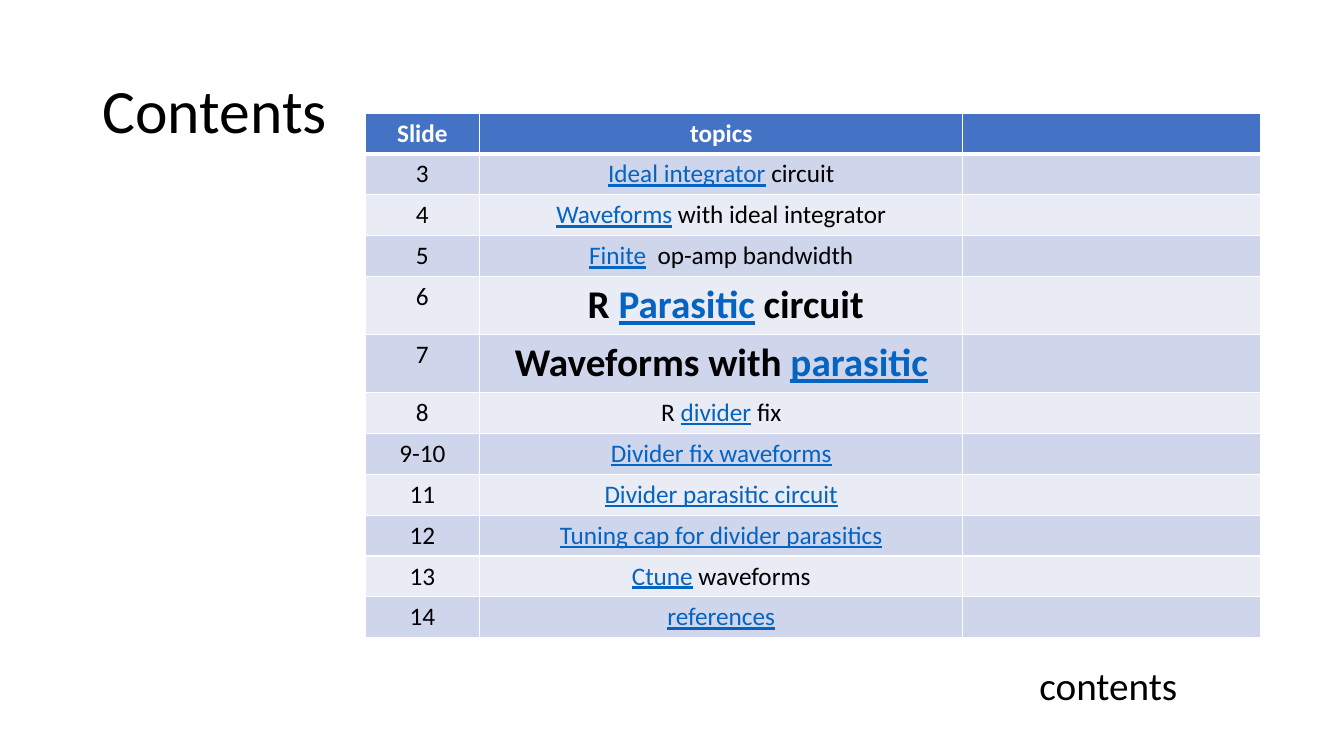
"""Builds the contents slide with its table of topics."""
from lxml.etree import SubElement as Sub
from pptx import Presentation as Deck
from pptx.dml.color import RGBColor as Rgb
from pptx.enum.text import MSO_ANCHOR as Anchor, PP_ALIGN as Align
from pptx.oxml.ns import qn
from pptx.util import Inches, Pt

WIDE, HIGH = Inches(13.33), Inches(7.5)
HUES = {"text": "000000", "link": "0563C1", "head": "4472C4",
        "odd": "CFD5EA", "even": "E9EBF5", "white": "FFFFFF"}
FONT = "Calibri"
BODY, BIG = 18, 28
COLS = (8.55, 35.93, 22.2)
ROWS = {BODY: 5.41, BIG: 7.67}
TOPICS = [
    ("3", "|Ideal integrator| circuit", BODY),
    ("4", "|Waveforms| with ideal integrator", BODY),
    ("5", "|Finite|  op-amp bandwidth", BODY),
    ("6", " R |Parasitic| circuit", BIG),
    ("7", "Waveforms with |parasitic", BIG),
    ("8", "R |divider| fix", BODY),
    ("9-10", "|Divider fix waveforms", BODY),
    ("11", "|Divider parasitic circuit", BODY),
    ("12", "|Tuning cap for divider parasitics", BODY),
    ("13", "|Ctune| waveforms", BODY),
    ("14", "|references", BODY),
]


def across(share):
    """Turn a percentage of the slide's width into a length."""
    return round(WIDE * share / 100)


def down(share):
    """Turn a percentage of the slide's height into a length."""
    return round(HIGH * share / 100)


def style(item, form):
    """Set each attribute in the format on the item."""
    for name, value in form.items():
        setattr(item, name, value)


def write(frame, text, size, hue="text", bold=False, **form):
    """Write text whose every second part, split at bars, looks like a link."""
    para = frame.paragraphs[0]
    style(para, form)
    for place, part in enumerate(text.split("|")):
        if part:
            link = place % 2 == 1
            run = para.add_run()
            run.text = part
            style(run.font, {"name": FONT, "size": Pt(size), "bold": bold,
                             "underline": link})
            run.font.color.rgb = Rgb.from_string(HUES["link" if link else hue])


def label(slide, box, text, size, form, **para):
    """Add a text box placed in shares of the slide."""
    left, top, width, height = box
    frame = slide.shapes.add_textbox(across(left), down(top), across(width),
                                     down(height)).text_frame
    style(frame, form)
    write(frame, text, size, **para)


def edge(cell, sides):
    """Draw white borders with a width in points for each side."""
    props = cell._tc.get_or_add_tcPr()
    for side, width in sides.items():
        line = Sub(props, qn("a:ln" + side), w=str(Pt(width)))
        paint = Sub(line, qn("a:solidFill"))
        Sub(paint, qn("a:srgbClr"), val=HUES["white"])


def fill_row(table, row, texts, sizes, hue, ink="text"):
    """Fill, border and write one row of the table."""
    sides = {"L": 1, "R": 1, "T": 3 if row == 1 else 1, "B": 1 if row else 3}
    for col, (text, size) in enumerate(zip(texts, sizes)):
        cell = table.cell(row, col)
        edge(cell, sides)
        cell.fill.solid()
        cell.fill.fore_color.rgb = Rgb.from_string(HUES[hue])
        write(cell.text_frame, text, size, ink, row == 0 or size == BIG,
              alignment=Align.CENTER)


def grid(slide, left, top):
    """Add the table of slides and topics."""
    highs = [ROWS[BODY]] + [ROWS[size] for _, _, size in TOPICS]
    table = slide.shapes.add_table(
        len(highs), len(COLS), across(left), down(top),
        across(sum(COLS)), down(sum(highs))).table
    for col, share in zip(table.columns, COLS):
        col.width = across(share)
    for row, share in zip(table.rows, highs):
        row.height = down(share)
    fill_row(table, 0, ("Slide", "topics", ""), (BODY,) * 3, "head", "white")
    for row, (page, topic, size) in enumerate(TOPICS, 1):
        fill_row(table, row, (page, topic, ""), (BODY, size, BODY),
                 "odd" if row % 2 else "even")


def main():
    """Build and save the slide."""
    deck = Deck()
    style(deck, {"slide_width": WIDE, "slide_height": HIGH})
    slide = deck.slides.add_slide(deck.slide_layouts[6])
    label(slide, (6.9, 5.33, 86.25, 19.33), "Contents", 44,
          {"word_wrap": True, "vertical_anchor": Anchor.MIDDLE},
          line_spacing=0.9)
    grid(slide, 27.15, 14.95)
    label(slide, (76.6, 86.8, 11.93, 7.6), "contents", BIG,
          {"word_wrap": False})
    deck.save("out.pptx")


if __name__ == "__main__":
    main()
